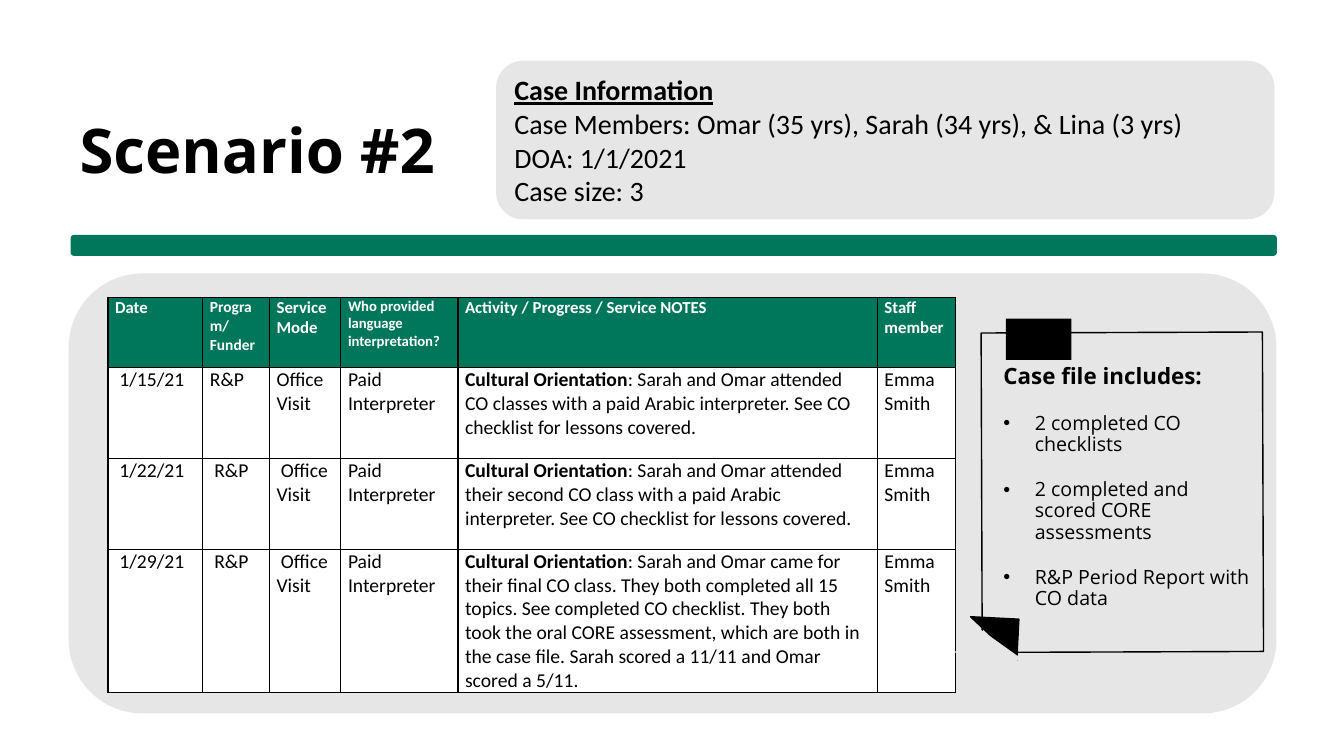
from lxml import etree
from pptx import Presentation
from pptx.dml.color import RGBColor
from pptx.enum.shapes import MSO_SHAPE
from pptx.enum.text import MSO_ANCHOR, PP_ALIGN
from pptx.oxml.ns import qn
from pptx.util import Cm, Pt

ROUNDED, RECTANGLE = MSO_SHAPE.ROUNDED_RECTANGLE, MSO_SHAPE.RECTANGLE
RIGHT_TRIANGLE = MSO_SHAPE.RIGHT_TRIANGLE
MIDDLE, TOP = MSO_ANCHOR.MIDDLE, MSO_ANCHOR.TOP
LEFT = PP_ALIGN.LEFT

GREEN = RGBColor(0x00, 0x76, 0x5A)
GRAY = RGBColor(0xE7, 0xE6, 0xE6)
BLACK = RGBColor(0x00, 0x00, 0x00)
WHITE = RGBColor(0xFF, 0xFF, 0xFF)
BODY_FONT, HEADING_FONT = "Calibri", "Open Sans"

CASE_INFO = [
    "Case Members: Omar (35 yrs), Sarah (34 yrs), & Lina (3 yrs)",
    "DOA: 1/1/2021",
    "Case size: 3",
]
COLUMN_WIDTHS = [2.39, 1.68, 1.8, 2.95, 10.57, 1.96]
ROW_HEIGHTS = [1.78, 2.29, 2.29, 3.58]
# Header lines of each column and their size in points
HEADERS = [
    (["Date"], 12),
    (["Program/", "Funder"], 11),
    (["Service Mode"], 12),
    (["Who provided language interpretation?"], 10.5),
    (["Activity / Progress / Service NOTES"], 12),
    (["Staff member"], 12),
]
# Date, number of leading columns with an indented first line, notes
VISITS = [
    ("1/15/21", 1, ": Sarah and Omar attended CO classes with a paid Arabic "
     "interpreter. See CO checklist for lessons covered."),
    ("1/22/21", 3, ": Sarah and Omar attended their second CO class with a paid "
     "Arabic interpreter. See CO checklist for lessons covered."),
    ("1/29/21", 3, ": Sarah and Omar came for their final CO class. They both "
     "completed all 15 topics. See completed CO checklist. They both took the "
     "oral CORE assessment, which are both in the case file. Sarah scored a "
     "11/11 and Omar scored a 5/11."),
]
CASE_FILE = [
    "2 completed CO checklists",
    "2 completed and scored CORE assessments",
    "R&P Period Report with CO data",
]


def box(left, top, width, height):
    return Cm(left), Cm(top), Cm(width), Cm(height)


def add_run(paragraph, text, size, font=BODY_FONT, color=BLACK, bold=False,
            underline=False):
    run = paragraph.add_run()
    run.text = text
    run.font.size = Pt(size)
    run.font.name = font
    run.font.color.rgb = color
    run.font.bold = bold
    run.font.underline = underline


def add_paragraph(frame, first=False):
    paragraph = frame.paragraphs[0] if first else frame.add_paragraph()
    paragraph.alignment = LEFT
    return paragraph


def add_panel(slide, kind, bounds, fill=None, line=None, rotation=0):
    panel = slide.shapes.add_shape(kind, *box(*bounds))
    panel.shadow.inherit = False
    panel.rotation = rotation
    if fill is None:
        panel.fill.background()
    else:
        panel.fill.solid()
        panel.fill.fore_color.rgb = fill
    if line is None:
        panel.line.fill.background()
    else:
        panel.line.color.rgb = line
        panel.line.width = Pt(1)
    return panel


def set_title(slide, text):
    title = slide.shapes.title
    title.left, title.top, title.width, title.height = box(1.75, 2.69, 18.49, 2.13)
    title.text_frame.vertical_anchor = MIDDLE
    add_run(add_paragraph(title.text_frame, True), text, 44, HEADING_FONT, bold=True)


def add_case_info(slide):
    panel = add_panel(slide, ROUNDED, (12.52, 1.55, 19.58, 3.96), GRAY, GRAY)
    frame = panel.text_frame
    frame.word_wrap = True
    frame.vertical_anchor = MIDDLE
    add_run(add_paragraph(frame, True), "Case Information", 20, bold=True,
            underline=True)
    for fact in CASE_INFO:
        add_run(add_paragraph(frame), fact, 20)


def set_borders(cell):
    properties = cell._tc.get_or_add_tcPr()
    for position, side in enumerate(("a:lnL", "a:lnR", "a:lnT", "a:lnB")):
        border = etree.Element(qn(side), w=str(Pt(1)))
        fill = etree.SubElement(border, qn("a:solidFill"))
        etree.SubElement(fill, qn("a:srgbClr"), val=str(BLACK))
        properties.insert(position, border)


def format_cell(cell, fill):
    cell.fill.solid()
    cell.fill.fore_color.rgb = fill
    cell.margin_left = cell.margin_right = Cm(0.18)
    cell.margin_top = cell.margin_bottom = 0
    cell.vertical_anchor = TOP
    set_borders(cell)


def add_case_notes(slide):
    frame = slide.shapes.add_table(
        len(ROW_HEIGHTS), len(COLUMN_WIDTHS),
        *box(2.72, 7.49, sum(COLUMN_WIDTHS), sum(ROW_HEIGHTS)))
    notes = frame.table
    for column, width in zip(notes.columns, COLUMN_WIDTHS):
        column.width = Cm(width)
    for row, height in zip(notes.rows, ROW_HEIGHTS):
        row.height = Cm(height)

    # Header row
    for column, (lines, size) in enumerate(HEADERS):
        cell = notes.cell(0, column)
        format_cell(cell, GREEN)
        for number, line in enumerate(lines):
            add_run(add_paragraph(cell.text_frame, number == 0), line, size,
                    color=WHITE, bold=True)

    # One row per visit
    for row, (date, indented, activity) in enumerate(VISITS, 1):
        values = [date, "R&P", "Office Visit", "Paid Interpreter", activity,
                  "Emma Smith"]
        for column, value in enumerate(values):
            cell = notes.cell(row, column)
            format_cell(cell, WHITE)
            paragraph = add_paragraph(cell.text_frame, True)
            if column < indented:
                paragraph._p.get_or_add_pPr().set("indent", str(Cm(0.11)))
            if value is activity:
                add_run(paragraph, "Cultural Orientation", 14, bold=True)
            add_run(paragraph, value, 14)


def add_bullet(paragraph):
    properties = paragraph._p.get_or_add_pPr()
    properties.set("marL", str(Cm(0.79)))
    properties.set("indent", str(-Cm(0.79)))
    etree.SubElement(properties, qn("a:buFont"), typeface="Arial")
    etree.SubElement(properties, qn("a:buChar"), char="•")


def add_case_file(slide):
    # Sticky note with a curled corner and a strip of tape
    add_panel(slide, RECTANGLE, (24.74, 8.38, 7.09, 8.05), line=BLACK, rotation=359.8)
    add_panel(slide, RIGHT_TRIANGLE, (24.43, 15.57, 1.22, 1.04), BLACK, BLACK, 182.9)
    add_panel(slide, RECTANGLE, (24.18, 16.08, 1.4, 0.84), GRAY, rotation=35.5)
    add_panel(slide, RECTANGLE, (25.35, 8.03, 1.65, 1.04), BLACK, rotation=0.1)

    # List on the note
    frame = slide.shapes.add_textbox(*box(25.04, 9.09, 6.78, 6.93)).text_frame
    frame.word_wrap = True
    heading = add_paragraph(frame, True)
    heading.line_spacing = 0.9
    add_run(heading, "Case file includes:", 16, HEADING_FONT, bold=True)
    for document in CASE_FILE:
        entry = add_paragraph(frame)
        entry.line_spacing = 0.9
        entry.space_before = Pt(17)
        add_bullet(entry)
        add_run(entry, document, 14, HEADING_FONT)


def main():
    deck = Presentation()
    deck.slide_width, deck.slide_height = Cm(33.87), Cm(19.05)
    slide = deck.slides.add_slide(deck.slide_layouts[5])
    set_title(slide, "Scenario #2")
    add_panel(slide, ROUNDED, (1.78, 5.92, 30.4, 0.53), GREEN)
    add_panel(slide, ROUNDED, (1.75, 6.91, 30.4, 11.05), GRAY, GRAY)
    add_case_info(slide)
    add_case_notes(slide)
    add_case_file(slide)
    deck.save("out.pptx")


if __name__ == "__main__":
    main()
